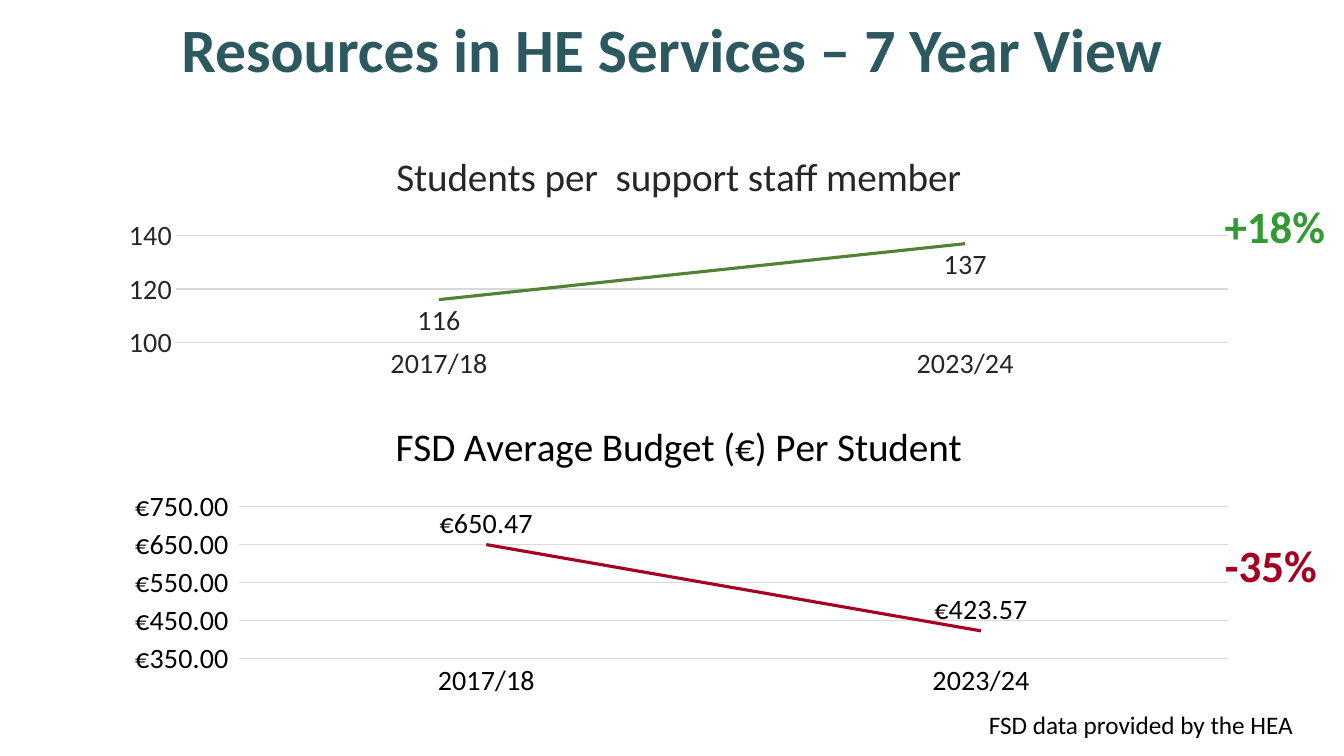
from dataclasses import dataclass

from pptx import Presentation, util as u
from pptx.chart.data import CategoryChartData
from pptx.dml.color import RGBColor
from pptx.enum import chart as ch, text

SLIDE_WIDTH = u.Inches(13.33)
SLIDE_HEIGHT = u.Inches(7.5)
FONT = "Calibri"
GRID_GREY = "D9D9D9"
YEARS = ("2017/18", "2023/24")


@dataclass(frozen=True)
class Frame:
    """Left, top, width and height in percent of the slide."""
    left: float
    top: float
    width: float
    height: float

    def lengths(self) -> tuple[int, int, int, int]:
        return (
            round(SLIDE_WIDTH * self.left / 100),
            round(SLIDE_HEIGHT * self.top / 100),
            round(SLIDE_WIDTH * self.width / 100),
            round(SLIDE_HEIGHT * self.height / 100),
        )


@dataclass(frozen=True)
class Caption:
    wording: str
    frame: Frame
    size: int
    color: str
    bold: bool = True
    align: text.PP_ALIGN = text.PP_ALIGN.CENTER
    anchor: text.MSO_ANCHOR = text.MSO_ANCHOR.TOP
    line_spacing: float = 1.0


@dataclass(frozen=True)
class Trend:
    heading: str
    frame: Frame
    values: tuple[float, float]
    line_color: str
    text_color: str
    lowest: int
    highest: int
    step: int
    axis_format: str
    label_format: str
    label_position: ch.XL_LABEL_POSITION


CAPTIONS = (
    Caption("Resources in HE Services – 7 Year View", Frame(6.9, 0, 86.27, 13.87),
            44, "2C595F", anchor=text.MSO_ANCHOR.MIDDLE, line_spacing=0.9),
    Caption("+18%", Frame(89.72, 25.6, 10.28, 8.53), 32, "339933"),
    Caption("-35%", Frame(89.42, 70.53, 10.28, 8.53), 32, "A50021"),
    Caption("FSD data provided by the HEA", Frame(72.84, 93.2, 26.63, 5.33),
            18, "000000", bold=False, align=text.PP_ALIGN.LEFT),
)

TRENDS = (
    Trend("Students per  support staff member", Frame(7.88, 17.47, 85.22, 33.6),
          (116, 137), "548235", "262626", 100, 140, 20,
          "0", "0", ch.XL_LABEL_POSITION.BELOW),
    Trend("FSD Average Budget (€) Per Student", Frame(7.88, 53.07, 85.22, 40),
          (650.47, 423.57), "A50021", "000000", 350, 750, 100,
          "_-[$€-83C]* #,##0.00_-", "[$€-1809]#,##0.00", ch.XL_LABEL_POSITION.ABOVE),
)


def rgb(color: str) -> RGBColor:
    return RGBColor.from_string(color)


def style_font(font, size: int, color: str, bold: bool = False) -> None:
    font.name = FONT
    font.size = u.Pt(size)
    font.bold = bold
    font.color.rgb = rgb(color)


def style_line(line, color: str, width: float) -> None:
    line.color.rgb = rgb(color)
    line.width = u.Pt(width)


def add_caption(slide, caption: Caption) -> None:
    frame = slide.shapes.add_textbox(*caption.frame.lengths()).text_frame
    frame.word_wrap = True
    frame.vertical_anchor = caption.anchor
    paragraph = frame.paragraphs[0]
    paragraph.text = caption.wording
    paragraph.alignment = caption.align
    paragraph.line_spacing = caption.line_spacing
    style_font(paragraph.font, caption.size, caption.color, caption.bold)


def add_trend(slide, trend: Trend) -> None:
    data = CategoryChartData()
    data.categories = YEARS
    data.add_series(trend.heading, trend.values)
    chart = slide.shapes.add_chart(
        ch.XL_CHART_TYPE.LINE, *trend.frame.lengths(), data).chart
    style_font(chart.font, 20, trend.text_color)
    chart.has_legend = False
    chart.has_title = True
    heading = chart.chart_title.text_frame.paragraphs[0]
    heading.text = trend.heading
    style_font(heading.font, 28, trend.text_color)

    years, scale = chart.category_axis, chart.value_axis
    for axis in (years, scale):
        axis.major_tick_mark = axis.minor_tick_mark = ch.XL_TICK_MARK.NONE
        style_font(axis.tick_labels.font, 20, trend.text_color)
    style_line(years.format.line, GRID_GREY, 0.75)
    years.has_major_gridlines = False
    scale.format.line.fill.background()
    scale.has_major_gridlines = True
    style_line(scale.major_gridlines.format.line, GRID_GREY, 0.75)
    scale.minimum_scale = trend.lowest
    scale.maximum_scale = trend.highest
    scale.major_unit = trend.step
    scale.tick_labels.number_format = trend.axis_format
    scale.tick_labels.number_format_is_linked = False

    plot = chart.plots[0]
    plot.vary_by_categories = False
    series = plot.series[0]
    series.smooth = False
    series.marker.style = ch.XL_MARKER_STYLE.NONE
    style_line(series.format.line, trend.line_color, 2.25)
    labels = series.data_labels
    labels.show_value = True
    labels.position = trend.label_position
    labels.number_format = trend.label_format
    labels.number_format_is_linked = False
    style_font(labels.font, 20, trend.text_color)


def main() -> None:
    deck = Presentation()
    deck.slide_width = SLIDE_WIDTH
    deck.slide_height = SLIDE_HEIGHT
    slide = deck.slides.add_slide(deck.slide_layouts[6])
    for trend in TRENDS:
        add_trend(slide, trend)
    for caption in CAPTIONS:
        add_caption(slide, caption)
    deck.save("out.pptx")


if __name__ == "__main__":
    main()
